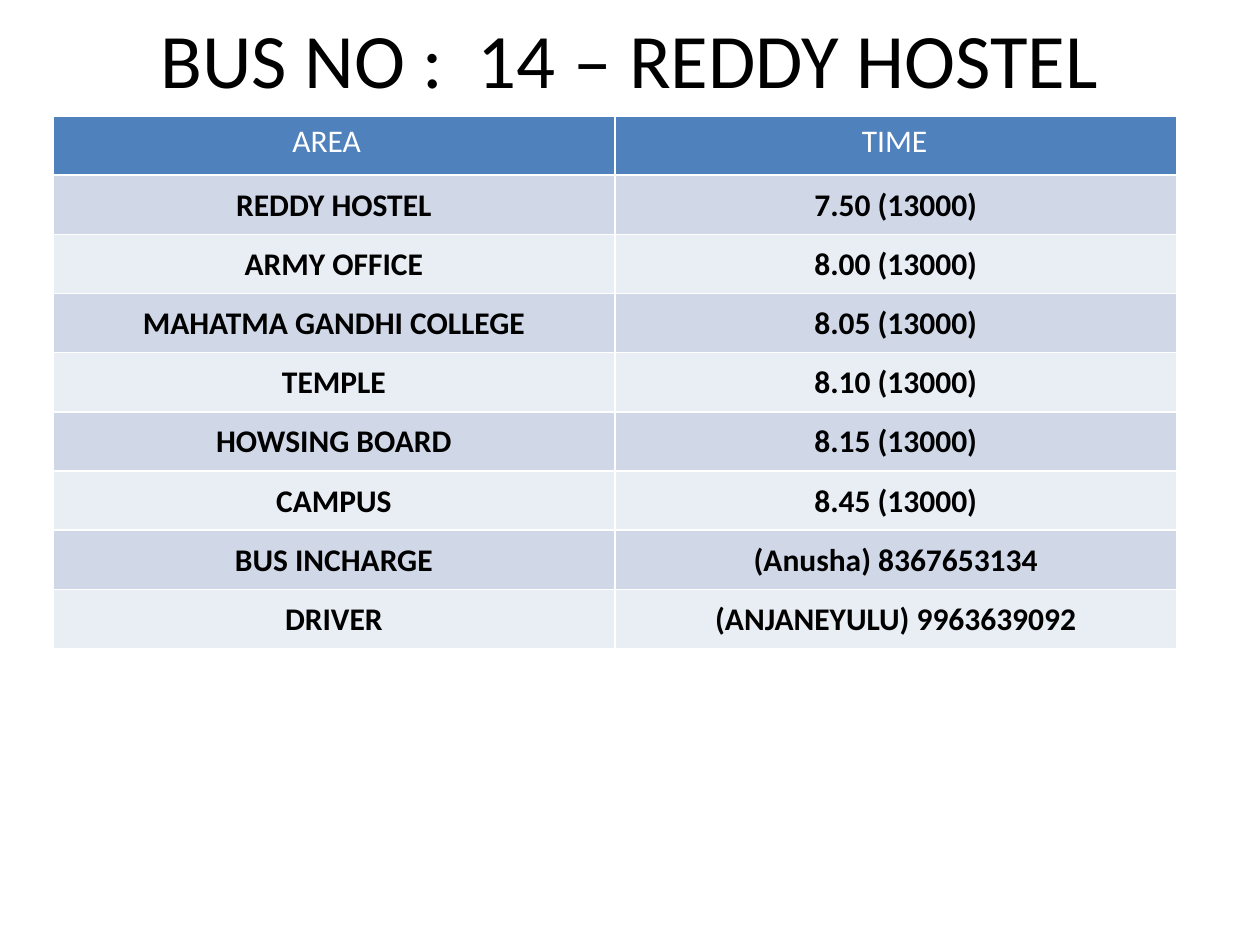
from pptx import Presentation
from pptx.dml.color import RGBColor
from pptx.enum.text import MSO_ANCHOR, PP_ALIGN
from pptx.oxml import parse_xml
from pptx.oxml.ns import nsdecls
from pptx.util import Inches, Pt

TITLE = "BUS NO :  14 – REDDY HOSTEL"
HEADERS = [("AREA", 1.9), ("TIME", 1.96)]  # text, left margin in inches
STOPS = [
    ("REDDY HOSTEL", "7.50 (13000)"),
    ("ARMY OFFICE", "8.00 (13000)"),
    ("MAHATMA GANDHI COLLEGE", "8.05 (13000)"),
    ("TEMPLE", "8.10 (13000)"),
    ("HOWSING BOARD", "8.15 (13000)"),
    ("CAMPUS", "8.45 (13000)"),
    ("BUS INCHARGE", "(Anusha) 8367653134"),
    ("DRIVER", "(ANJANEYULU) 9963639092"),
]
HEADER_FILL = "4F81BD"
BAND_FILLS = ["D0D8E8", "E9EDF4"]
BLACK, WHITE = "000000", "FFFFFF"
COLUMN_WIDTH, ROW_HEIGHT = 4.46, 0.47


def color(value):
    return RGBColor.from_string(value)


def write(text_frame, text, size=18, fill=BLACK, bold=False, align=PP_ALIGN.CENTER):
    paragraph = text_frame.paragraphs[0]
    paragraph.alignment = align
    run = paragraph.add_run()
    run.text = text
    run.font.name = "Calibri"
    run.font.size = Pt(size)
    run.font.bold = bold
    run.font.color.rgb = color(fill)


def format_cell(cell, fill):
    """Give the cell white 1 pt borders and a solid fill."""
    properties = cell._tc.get_or_add_tcPr()
    for side in "LRTB":
        properties.append(parse_xml(
            f'<a:ln{side} {nsdecls("a")} w="{Pt(1)}"><a:solidFill>'
            f'<a:srgbClr val="{WHITE}"/></a:solidFill></a:ln{side}>'))
    cell.fill.solid()
    cell.fill.fore_color.rgb = color(fill)


presentation = Presentation()
presentation.slide_width = Inches(10)
presentation.slide_height = Inches(7.5)
slide = presentation.slides.add_slide(presentation.slide_layouts[6])

title = slide.shapes.add_textbox(Inches(0.75), 0, Inches(8.5), Inches(0.92))
title.text_frame.word_wrap = True
title.text_frame.vertical_anchor = MSO_ANCHOR.MIDDLE
write(title.text_frame, TITLE, size=44)

row_count = len(STOPS) + 1
table = slide.shapes.add_table(
    row_count, len(HEADERS), Inches(0.42), Inches(0.92),
    Inches(COLUMN_WIDTH * len(HEADERS)), Inches(ROW_HEIGHT * row_count)).table
for column in table.columns:
    column.width = Inches(COLUMN_WIDTH)
for row in table.rows:
    row.height = Inches(ROW_HEIGHT)

for column_index, (text, margin) in enumerate(HEADERS):
    cell = table.cell(0, column_index)
    format_cell(cell, HEADER_FILL)
    cell.margin_left = Inches(margin)
    write(cell.text_frame, text, fill=WHITE, align=PP_ALIGN.LEFT)

for row_index, stop in enumerate(STOPS):
    for column_index, text in enumerate(stop):
        cell = table.cell(row_index + 1, column_index)
        format_cell(cell, BAND_FILLS[row_index % 2])
        cell.vertical_anchor = MSO_ANCHOR.MIDDLE
        cell.margin_left = cell.margin_right = cell.margin_top = Inches(0.01)
        cell.margin_bottom = 0
        write(cell.text_frame, text, bold=True)

presentation.save("out.pptx")
